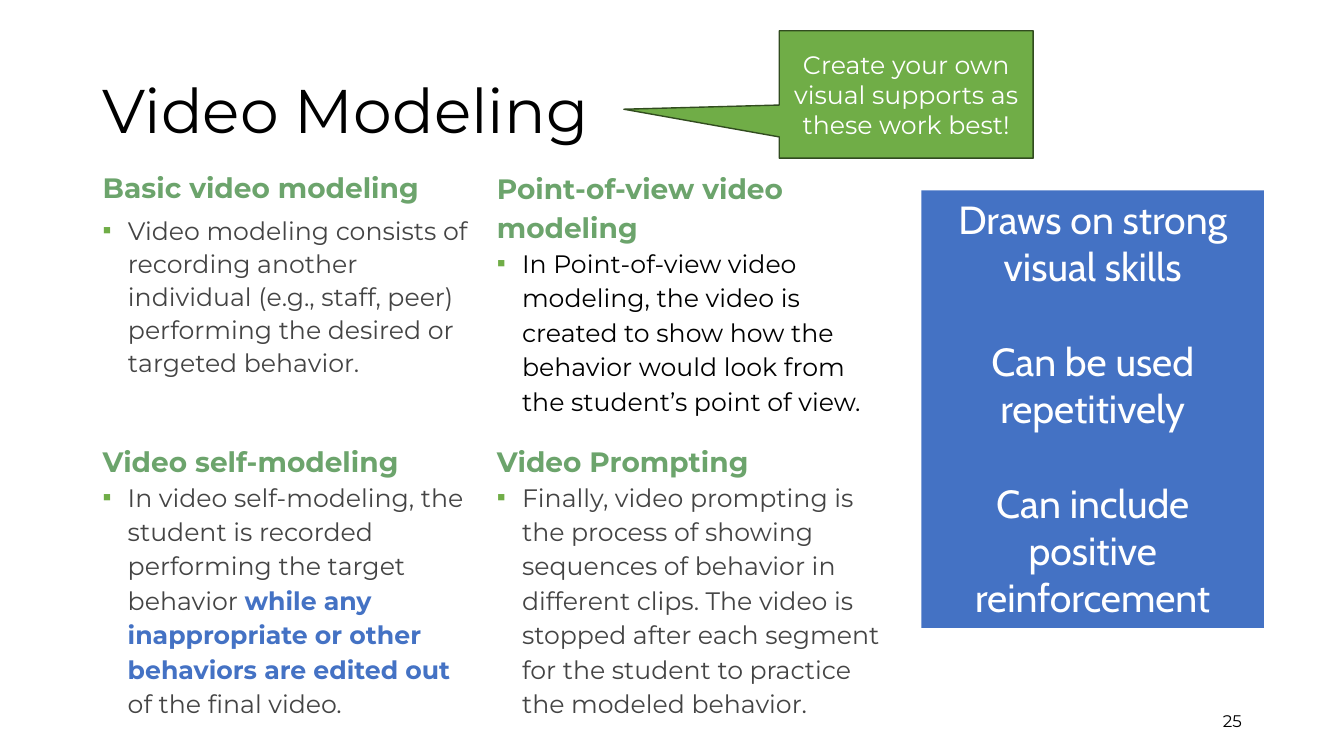
import pptx
import pptx.util
import pptx.dml.color
import pptx.enum.shapes
import pptx.enum.text
import pptx.oxml.ns
from lxml import etree

Pt = pptx.util.Pt
RGB = pptx.dml.color.RGBColor
Align = pptx.enum.text.PP_ALIGN
Anchor = pptx.enum.text.MSO_ANCHOR
Shape = pptx.enum.shapes.MSO_SHAPE

BLACK = RGB(0x00, 0x00, 0x00)
WHITE = RGB(0xFF, 0xFF, 0xFF)
GRAY = RGB(0x44, 0x44, 0x44)
SAGE = RGB(0x6C, 0xA4, 0x6C)
GREEN = RGB(0x70, 0xAD, 0x47)
DARK = RGB(0x31, 0x4C, 0x1F)
BLUE = RGB(0x44, 0x72, 0xC4)

LEFT, MID = 66.2, 347.8
TOP, LOW = 115.9, 310.3


def place(shape, left, top, width, height):
    shape.left, shape.top = Pt(left), Pt(top)
    shape.width, shape.height = Pt(width), Pt(height)


def write(frame, text, size=18, color=BLACK, bold=False, font="Montserrat",
          align=Align.LEFT, line=1.0, before=0, new=True):
    """Add text as a new paragraph, or as a run of the last one."""
    para = frame.paragraphs[-1]
    if new and para.runs:
        para = frame.add_paragraph()
    if new:
        para.alignment = align
        para.line_spacing = line
        para.space_before = Pt(before)
    run = para.add_run()
    run.text = text
    run.font.size = Pt(size)
    run.font.name = font
    run.font.bold = bold
    run.font.color.rgb = color
    return para


def mark(para, bullet=None):
    """Set a hanging bullet, or clear the inherited one."""
    props = para._p.get_or_add_pPr()
    indent = Pt(18) if bullet else 0
    props.set("marL", str(indent))
    props.set("indent", str(-indent))
    qn = pptx.oxml.ns.qn
    if bullet:
        tint = etree.SubElement(props, qn("a:buClr"))
        etree.SubElement(tint, qn("a:srgbClr"), val=str(GREEN))
        etree.SubElement(props, qn("a:buFont"), typeface="Arial")
        etree.SubElement(props, qn("a:buChar"), char=bullet)
    else:
        etree.SubElement(props, qn("a:buNone"))


def setup(frame, anchor=Anchor.TOP):
    frame.word_wrap = True
    frame.auto_size = pptx.enum.text.MSO_AUTO_SIZE.NONE
    frame.vertical_anchor = anchor
    return frame


def add_box(slide, left, top, width, height, anchor=Anchor.TOP):
    sizes = [Pt(n) for n in (left, top, width, height)]
    return setup(slide.shapes.add_textbox(*sizes).text_frame, anchor)


def add_block(slide, kind, left, top, width, height, fill):
    sizes = [Pt(n) for n in (left, top, width, height)]
    shape = slide.shapes.add_shape(kind, *sizes)
    shape.shadow.inherit = False
    shape.fill.solid()
    shape.fill.fore_color.rgb = fill
    shape.line.fill.background()
    return shape


def add_topic(frame, head, parts, line=1.14, before=0):
    """Write a heading and one bullet made of (text, color, bold) parts."""
    mark(write(frame, head, size=20, color=SAGE, bold=True,
               line=line, before=before))
    for i, (text, color, bold) in enumerate(parts):
        para = write(frame, text, color=color, bold=bold,
                     line=line, before=before, new=i == 0)
        if i == 0:
            mark(para, "▪")


def main():
    deck = pptx.Presentation()
    deck.slide_width, deck.slide_height = Pt(960), Pt(540)
    slide = deck.slides.add_slide(deck.slide_layouts[1])

    # Title
    title = slide.shapes.title
    place(title, LEFT, 28.8, 828, 104.4)
    write(setup(title.text_frame, Anchor.MIDDLE), "Video Modeling",
          size=44, line=0.9)

    # Four topics
    body = slide.placeholders[1]
    place(body, LEFT, TOP, 281.6, 208)
    add_topic(setup(body.text_frame), "Basic video modeling", [
        ("Video modeling consists of recording another individual (e.g., "
         "staff, peer) performing the desired or targeted behavior.",
         GRAY, False)], line=1.09, before=6)
    add_topic(add_box(slide, MID, LOW, 301.7, 208), "Video Prompting", [
        ("Finally, video prompting is the process of showing sequences of "
         "behavior in different clips. The video is stopped after each "
         "segment for the student to practice the modeled behavior.",
         GRAY, False)])
    add_topic(add_box(slide, LEFT, LOW, 281.6, 208), "Video self-modeling", [
        ("In video self-modeling, the student is recorded performing the "
         "target behavior ", GRAY, False),
        ("while any inappropriate or other behaviors are edited out ",
         BLUE, True),
        ("of the final video.", GRAY, False)])
    add_topic(add_box(slide, MID, TOP, 290.9, 183.6),
              "Point-of-view video modeling", [
        ("In Point-of-view video modeling, the video is created to show how "
         "the behavior would look from the student’s point of view.",
         BLACK, False)])

    # Benefits panel
    panel = add_block(slide, Shape.RECTANGLE, 658.1, 136.1, 244.8, 312.5, BLUE)
    frame = setup(panel.text_frame)
    gains = ("Draws on strong visual skills", "Can be used repetitively",
             "Can include positive reinforcement")
    for i, gain in enumerate(gains):
        write(frame, gain, size=28, color=WHITE, font="Cabin",
              align=Align.CENTER, before=34 if i else 0)

    # Callout
    call = add_block(slide, Shape.RECTANGULAR_CALLOUT,
                     556.6, 22.0, 181.4, 91.0, GREEN)
    call.adjustments[0], call.adjustments[1] = -1.112, 0.116
    call.line.color.rgb = DARK
    call.line.width = Pt(1)
    write(setup(call.text_frame, Anchor.MIDDLE),
          "Create your own visual supports as these work best!",
          color=WHITE, align=Align.CENTER)

    # Page number
    write(add_box(slide, 678.2, 500.4, 216, 28.8, Anchor.MIDDLE), "25",
          size=12, align=Align.RIGHT)

    deck.save("out.pptx")


if __name__ == "__main__":
    main()
